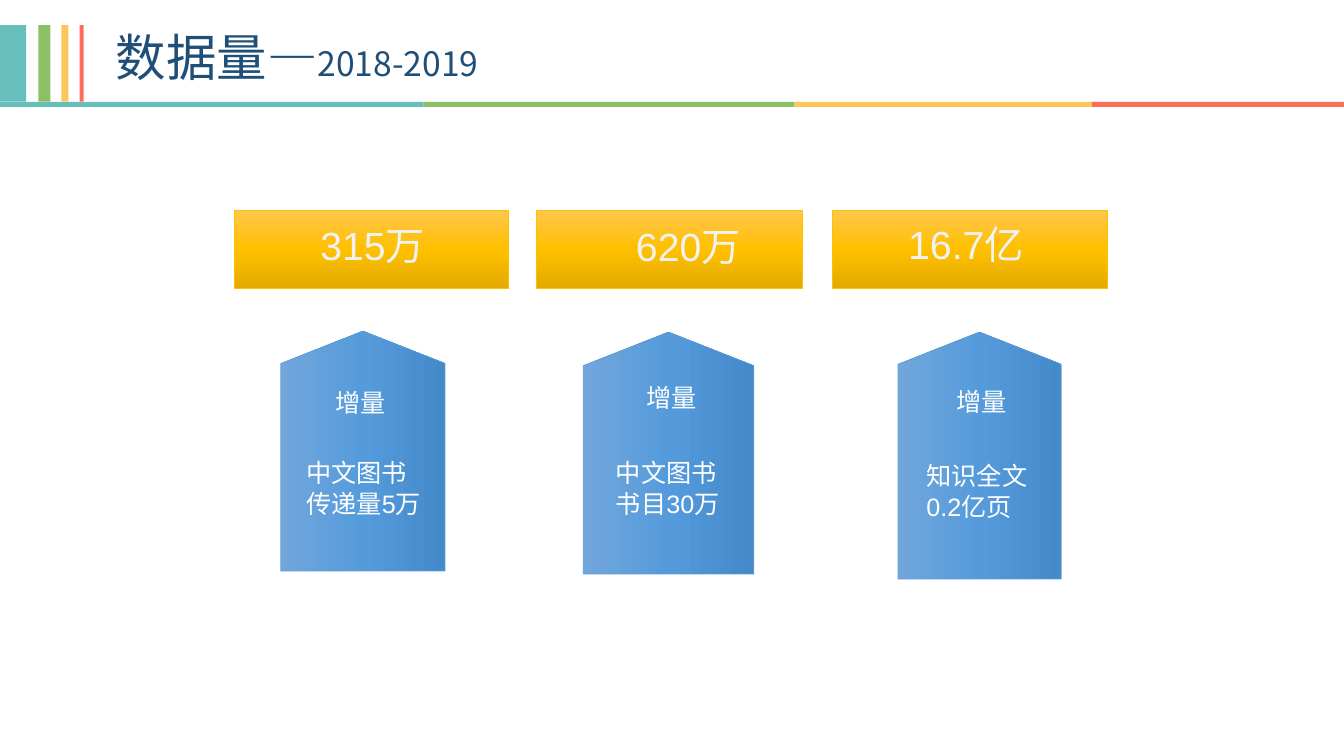
import copy

import pptx
import pptx.dml.color
import pptx.enum.shapes
import pptx.enum.text
import pptx.oxml
import pptx.oxml.ns
import pptx.util
from pptx.util import Inches

SHAPES = pptx.enum.shapes.MSO_SHAPE


def colour(value):
    return pptx.dml.color.RGBColor.from_string(value)


def write(paragraph, text, size=18, font="Arial", fill="FFFFFF"):
    """Add one formatted run to a paragraph."""
    run = paragraph.add_run()
    run.text = text
    run.font.size = pptx.util.Pt(size)
    run.font.name = font
    run.font.color.rgb = colour(fill)
    east_asian = pptx.oxml.parse_xml(
        f'<a:ea {pptx.oxml.ns.nsdecls("a")} typeface="Noto Sans CJK SC"/>')
    run.font._element.find(pptx.oxml.ns.qn("a:latin")).addnext(east_asian)


class SlideBuilder:
    STRIPES = ["66BFBC", "8CC066", "FBC75D", "FC6E5B"]
    BLUE = ["71A6DB", "559BDB", "448ACA"]
    GOLD = ["FFC64B", "FFC000", "E3AB00"]
    TITLE = {"font": "Noto Sans CJK SC", "fill": "1F4E79"}

    def __init__(self, presentation):
        self.slide = presentation.slides.add_slide(presentation.slide_layouts[5])

    def place(self, kind, box):
        shape = self.slide.shapes.add_shape(kind, *map(Inches, box))
        shape.shadow.inherit = False
        return shape

    def stripe(self, box, fill):
        shape = self.place(SHAPES.RECTANGLE, box)
        shape.fill.solid()
        shape.fill.fore_color.rgb = colour(fill)
        shape.line.fill.background()

    def gradient_shape(self, kind, box, stops, line):
        shape = self.place(kind, box)
        shape.fill.gradient()
        shape.fill.gradient_angle = 270  # counter-clockwise: runs top to bottom
        stop_list = shape.element.spPr.find(".//" + pptx.oxml.ns.qn("a:gsLst"))
        stop_list.append(copy.deepcopy(stop_list[0]))
        for index, stop in enumerate(shape.fill.gradient_stops):
            stop.position = index / 2
            stop.color.rgb = colour(stops[index])
        shape.line.color.rgb = colour(line)
        shape.line.width = pptx.util.Pt(0.5)
        return shape

    def banner(self, box):
        self.gradient_shape(SHAPES.RECTANGLE, box, self.GOLD, "FFC000")

    def arrow(self, box):
        shape = self.gradient_shape(SHAPES.PENTAGON, box, self.BLUE, "5B9BD5")
        shape.adjustments[0] = 0.197
        shape.rotation = 270

    def text(self, box, lines, **style):
        shape = self.slide.shapes.add_textbox(*map(Inches, box))
        frame = shape.text_frame
        frame.word_wrap = True
        frame.auto_size = pptx.enum.text.MSO_AUTO_SIZE.SHAPE_TO_FIT_TEXT
        for index, line in enumerate(lines):
            paragraph = frame.add_paragraph() if index else frame.paragraphs[0]
            write(paragraph, line, **style)

    def title(self, box, heading, years):
        shape = self.slide.shapes.title
        shape.left, shape.top, shape.width, shape.height = map(Inches, box)
        frame = shape.text_frame
        frame.word_wrap = True
        frame.auto_size = pptx.enum.text.MSO_AUTO_SIZE.SHAPE_TO_FIT_TEXT
        frame.vertical_anchor = pptx.enum.text.MSO_ANCHOR.TOP
        paragraph = frame.paragraphs[0]
        paragraph.alignment = pptx.enum.text.PP_ALIGN.LEFT
        write(paragraph, heading, size=36, **self.TITLE)
        write(paragraph, years, size=24, **self.TITLE)


def main():
    presentation = pptx.Presentation()
    presentation.slide_width = Inches(13.33)
    presentation.slide_height = Inches(7.5)
    builder = SlideBuilder(presentation)

    # Header: title, upright bars and the rule below
    builder.title((1.05, 0.21, 5.17, 0.71), "数据量—", "2018-2019")
    bars = [(0, 0.26), (0.38, 0.12), (0.61, 0.07), (0.79, 0.04)]
    rules = [(0, 4.2), (4.2, 3.68), (7.88, 2.99), (10.83, 2.5)]
    for fill, bar, rule in zip(builder.STRIPES, bars, rules):
        builder.stripe((bar[0], 0.25, bar[1], 0.76), fill)
        builder.stripe((rule[0], 1.01, rule[1], 0.05), fill)

    # Columns: total in a banner, yearly increase in an arrow
    columns = [
        {"arrow": (2.41, 3.66, 2.38, 1.63), "banner": (2.32, 2.09, 2.72, 0.77),
         "total": ("315万", (3.08, 2.15, 3.04, 0.57)),
         "label": (3.23, 3.79, 0.89, 0.4),
         "detail": (["中文图书", "传递量5万"], (2.94, 4.49, 1.61, 0.71))},
        {"arrow": (5.43, 3.65, 2.4, 1.69), "banner": (5.32, 2.09, 2.64, 0.77),
         "total": ("620万", (6.21, 2.16, 3.04, 0.57)),
         "label": (6.31, 3.74, 0.89, 0.4),
         "detail": (["中文图书", "书目30万"], (6.01, 4.49, 1.45, 0.71))},
        {"arrow": (8.49, 3.71, 2.45, 1.62), "banner": (8.26, 2.09, 2.72, 0.77),
         "total": ("16.7亿", (8.91, 2.14, 2.33, 0.57)),
         "label": (9.39, 3.78, 0.89, 0.4),
         "detail": (["知识全文", "0.2亿页"], (9.09, 4.52, 1.71, 0.71))},
    ]
    for column in columns:
        builder.arrow(column["arrow"])
        builder.banner(column["banner"])
    for column in columns:
        total, total_box = column["total"]
        detail, detail_box = column["detail"]
        builder.text(total_box, [total], size=28, fill="F2F2F2")
        builder.text(column["label"], ["增量"])
        builder.text(detail_box, detail)

    presentation.save("out.pptx")


if __name__ == "__main__":
    main()
